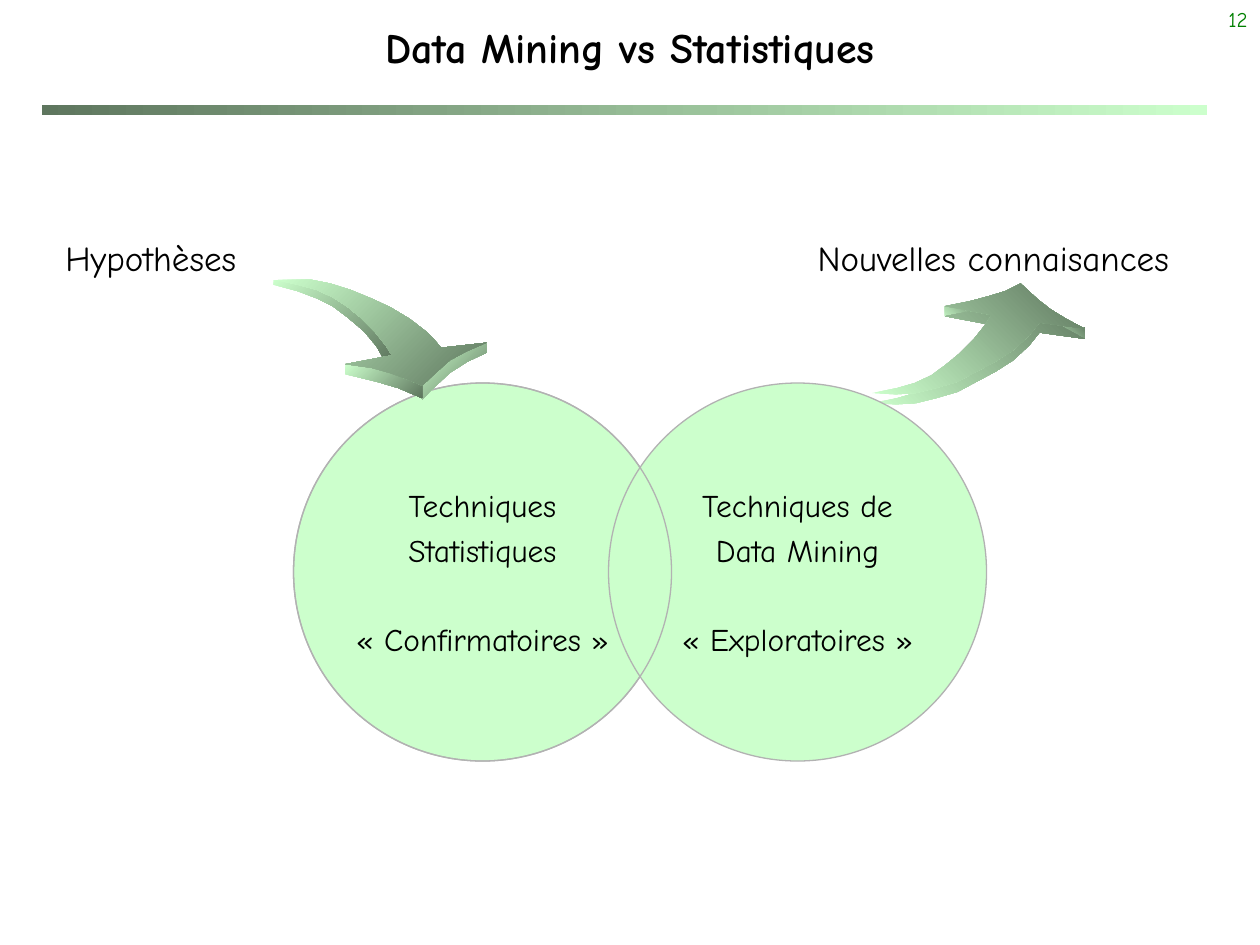
from pptx import Presentation
from pptx import util as u
from pptx.dml.color import RGBColor
from pptx.enum import shapes, text

DARK, LIGHT, GREY, BLACK, GREEN = "5E765E", "CCFFCC", "B2B2B2", "000000", "008000"
CELL = u.Inches(0.01)
COLS, ROWS = 1000, 750
AL = text.PP_ALIGN


def rgb(value):
    """Turn a hex string into a colour."""
    return RGBColor.from_string(value)


class Deck:
    """Hold the style and the current slide; lengths are cells of a 1000 by 750 grid."""

    font = "Comic Neue"

    def __init__(self):
        """Open a presentation with one title-only slide."""
        self.prs = Presentation()
        self.prs.slide_width, self.prs.slide_height = COLS * CELL, ROWS * CELL
        self.s = self.prs.slides.add_slide(self.prs.slide_layouts[5])

    def add_lines(self, sp, lines, size, align, color=BLACK, bold=False, gaps=()):
        """Add one paragraph per line, with optional gaps before them."""
        tf = sp.text_frame
        for i, line in enumerate(lines):
            p = tf.paragraphs[0] if i == 0 else tf.add_paragraph()
            p.alignment = align
            if gaps:
                p.space_before = u.Pt(gaps[i])
            r = p.add_run()
            r.text = line
            r.font.name, r.font.size, r.font.bold = self.font, u.Pt(size), bold
            r.font.color.rgb = rgb(color)
        return tf

    def gradient(self, sp, start, end, angle):
        """Fill a shape with a clockwise-angled gradient and no line."""
        sp.shadow.inherit = False
        sp.line.fill.background()
        sp.fill.gradient()
        sp.fill.gradient_angle = (360 - angle) % 360
        for stop, color, at in zip(sp.fill.gradient_stops, (start, end), (0, 1)):
            stop.color.rgb, stop.position = rgb(color), at

    def shape(self, kind, *box):
        """Add a preset shape."""
        sp = self.s.shapes.add_shape(kind, *(n * CELL for n in box))
        sp.shadow.inherit = False
        return sp

    def title(self, words, *box):
        """Place and format the title."""
        sp = self.s.shapes.title
        sp.left, sp.top, sp.width, sp.height = (n * CELL for n in box)
        tf = self.add_lines(sp, [words], 24, AL.CENTER, bold=True)
        tf.vertical_anchor = text.MSO_ANCHOR.MIDDLE

    def bar(self, *box):
        """Add the gradient bar under the title."""
        self.gradient(self.shape(shapes.MSO_SHAPE.RECTANGLE, *box), DARK, LIGHT, 0)

    def label(self, words, box, size=20, align=AL.JUSTIFY, color=BLACK):
        """Add a text box."""
        sp = self.s.shapes.add_textbox(*(n * CELL for n in box))
        sp.text_frame.word_wrap = True
        self.add_lines(sp, [words], size, align, color)

    def circle(self, left, top, size, lines=()):
        """Add a filled circle with text, or a bare outline without."""
        sp = self.shape(shapes.MSO_SHAPE.OVAL, left, top, size, size)
        sp.line.color.rgb, sp.line.width = rgb(GREY), u.Pt(0.75)
        if not lines:
            sp.fill.background()
            return
        sp.fill.solid()
        sp.fill.fore_color.rgb = rgb(LIGHT)
        tf = self.add_lines(sp, lines, 18, AL.CENTER, gaps=(4, 4, 29))
        tf.word_wrap = False
        tf.vertical_anchor = text.MSO_ANCHOR.MIDDLE

    def arrow(self, outlines, angle):
        """Add a curved solid arrow as a group of outlines."""
        group = self.s.shapes.add_group_shape()
        for start, *rest in outlines:
            fb = group.shapes.build_freeform(*start, scale=CELL)
            fb.add_line_segments(rest, close=True)
            self.gradient(fb.convert_to_shape(), LIGHT, DARK, angle)


UP_FACE = [
    (692, 312), (711, 313), (727, 312), (743, 308), (760, 303), (775, 295), (790, 287),
    (804, 278), (817, 266), (825, 256), (861, 261), (846, 253), (833, 245), (823, 237),
    (810, 225), (798, 231), (785, 235), (770, 239), (750, 243), (787, 250), (781, 259),
    (773, 269), (761, 281), (750, 290), (739, 298), (726, 304), (712, 308)]
UP_UNDERSIDE = [(x, y + 8) for x, y in UP_FACE]
UP_EDGES = [
    [(750, 251), (750, 243), (786, 250), (786, 253), (783, 257)],
    [(861, 268), (861, 260), (826, 255), (826, 264)]]

DOWN_FACE = [
    (217, 222), (247, 222), (262, 225), (278, 230), (295, 237), (310, 244), (325, 253),
    (338, 263), (345, 270), (350, 276), (386, 272), (370, 279), (357, 286), (348, 294),
    (335, 306), (323, 301), (309, 296), (295, 292), (274, 289), (311, 282), (306, 274),
    (298, 264), (286, 252), (275, 243), (264, 236), (251, 230), (236, 226)]
DOWN_EDGES = [
    [(217, 222), (217, 226), (236, 231), (252, 237), (264, 243), (276, 252), (289, 263),
     (299, 275), (304, 284), (315, 283), (301, 263), (285, 247), (264, 233), (242, 225)],
    [(335, 306), (335, 317), (343, 309), (357, 296), (371, 287), (386, 280), (386, 272),
     (362, 281), (347, 293)],
    [(274, 289), (274, 297), (299, 303), (316, 308), (335, 316), (335, 306), (315, 296),
     (288, 289)]]


def main():
    """Build the slide."""
    d = Deck()
    d.title("Data Mining vs Statistiques", 0, 8, 1000, 58)
    d.bar(33, 83, 925, 8)
    d.label("12", (792, 0, 208, 50), 12, AL.RIGHT, GREEN)
    d.arrow([*UP_EDGES, UP_UNDERSIDE, UP_FACE], 315)
    d.circle(233, 304, 300, ["Techniques", "Statistiques", "« Confirmatoires »"])
    d.circle(483, 304, 300, ["Techniques de", "Data Mining", "« Exploratoires »"])
    d.circle(233, 304, 300)
    d.arrow([*DOWN_EDGES, DOWN_FACE], 45)
    d.label("Hypothèses", (42, 183, 172, 44))
    d.label("Nouvelles connaisances", (639, 183, 321, 44))
    d.prs.save("out.pptx")


if __name__ == "__main__":
    main()
